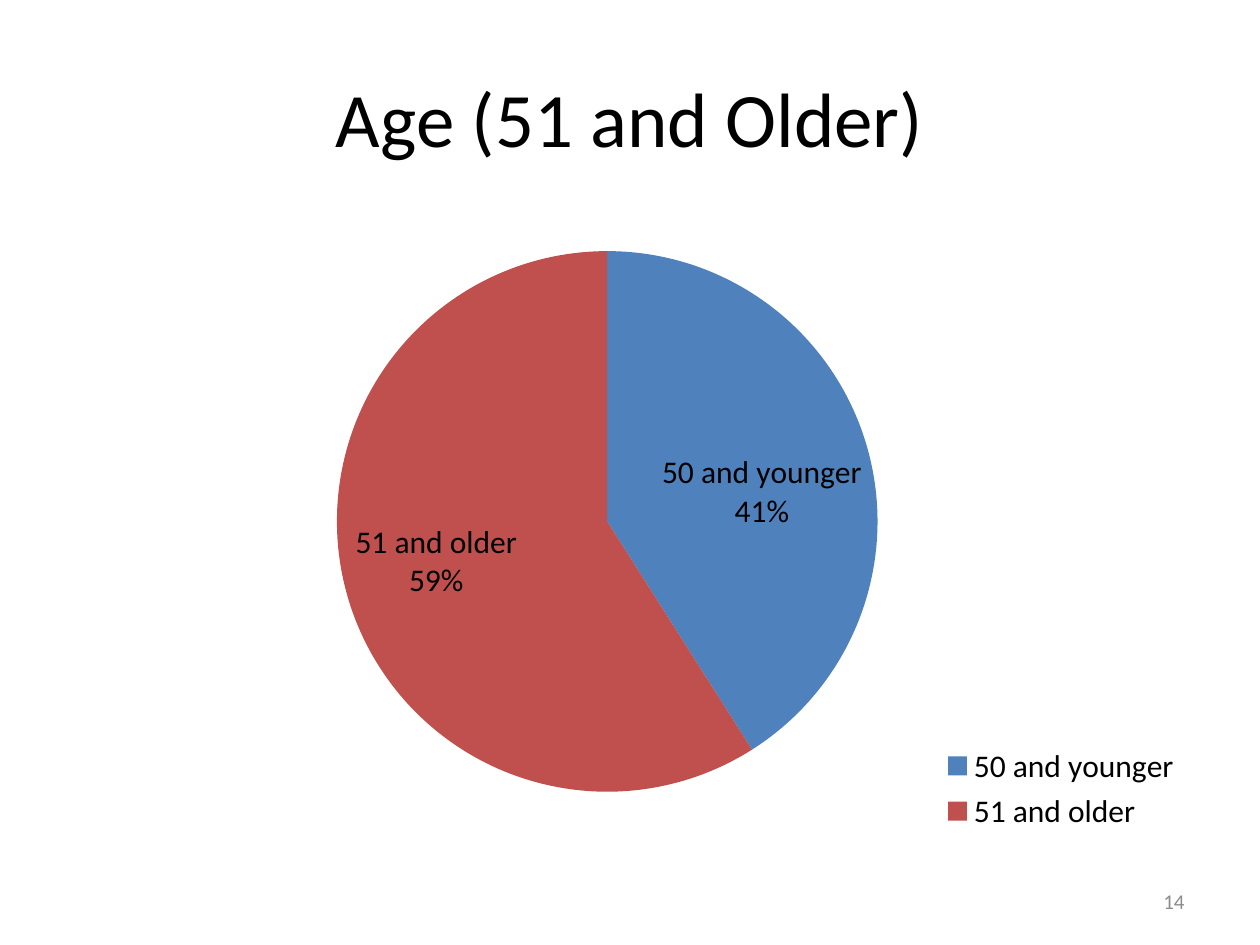
from dataclasses import dataclass

from lxml import etree
from pptx import Presentation
from pptx import util as u
from pptx.chart.data import CategoryChartData
from pptx.dml.color import RGBColor
from pptx.enum import chart as ch, text
from pptx.oxml import parse_xml
from pptx.oxml.ns import nsdecls

TITLE = "Age (51 and Older)"
PAGE = "14"
AGES = {"50 and younger": 41, "51 and older": 59}


@dataclass(frozen=True)
class Theme:
    font: str = "Calibri"
    ink: str = "000000"
    muted: str = "8C8C8C"
    slices: tuple = ("4F81BD", "C0504D")
    title: int = 44
    chart: int = 18
    page: int = 12


T = Theme()
TITLE_BOX = (0.5, 0.3, 9, 1.25)
CHART_BOX = (0.5, 1.58, 9, 5.17)
PAGE_BOX = (7.17, 6.95, 2.33, 0.4)
# Fractions of the chart area: left, top, width, height
PLOT_AREA = (0.07, 0.08, 0.82, 0.83)
LEGEND_AREA = (0.77, 0.83, 0.22, 0.15)


def set_font(font, size, color=T.ink):
    font.name = T.font
    font.size = u.Pt(size)
    font.color.rgb = RGBColor.from_string(color)


def add_text(s, box, content, size, color, align):
    tf = s.shapes.add_textbox(*map(u.Inches, box)).text_frame
    tf.word_wrap = True
    tf.vertical_anchor = text.MSO_ANCHOR.MIDDLE
    p = tf.paragraphs[0]
    p.text = content
    p.alignment = align
    set_font(p.font, size, color)


def manual_layout(area, inner=False):
    target = '<c:layoutTarget val="inner"/>' if inner else ""
    modes = "".join(f'<c:{k}Mode val="edge"/>' for k in "xy")
    sizes = "".join(f'<c:{k} val="{v}"/>' for k, v in zip("xywh", area))
    return parse_xml(f'<c:layout {nsdecls("c")}><c:manualLayout>'
                     f'{target}{modes}{sizes}</c:manualLayout></c:layout>')


def set_layout(parent, layout, before):
    """Put the layout just ahead of the named child, replacing any other."""
    for old in parent.xpath("./c:layout"):
        parent.remove(old)
    parent.xpath(f"./c:{before}")[0].addprevious(layout)


def add_age_pie(s):
    data = CategoryChartData()
    data.categories = list(AGES)
    data.add_series("Series 1", list(AGES.values()))
    chart = s.shapes.add_chart(ch.XL_CHART_TYPE.PIE,
                               *map(u.Inches, CHART_BOX), data).chart
    chart.has_title = False
    set_font(chart.font, T.chart)

    chart.has_legend = True
    legend = chart.legend
    legend.position = ch.XL_LEGEND_POSITION.RIGHT
    legend.include_in_layout = False
    set_font(legend.font, T.chart)

    plot = chart.plots[0]
    plot.vary_by_categories = True
    for i, color in enumerate(T.slices):
        fill = plot.series[0].points[i].format.fill
        fill.solid()
        fill.fore_color.rgb = RGBColor.from_string(color)

    plot.has_data_labels = True
    labels = plot.data_labels
    labels.show_category_name = labels.show_percentage = True
    labels.show_value = False
    labels.position = ch.XL_LABEL_POSITION.BEST_FIT
    set_font(labels.font, T.chart)
    separator = etree.Element(labels._element.tag.replace("dLbls", "separator"))
    separator.text = "\n"
    labels._element.xpath("./c:showBubbleSize")[0].addnext(separator)

    plot_area = chart._chartSpace.xpath(".//c:plotArea")[0]
    set_layout(plot_area, manual_layout(PLOT_AREA, inner=True), "pieChart")
    set_layout(legend._element, manual_layout(LEGEND_AREA), "overlay")


def main():
    prs = Presentation()
    prs.slide_width, prs.slide_height = u.Inches(10), u.Inches(7.5)
    s = prs.slides.add_slide(prs.slide_layouts[6])
    add_text(s, TITLE_BOX, TITLE, T.title, T.ink, text.PP_ALIGN.CENTER)
    add_text(s, PAGE_BOX, PAGE, T.page, T.muted, text.PP_ALIGN.RIGHT)
    add_age_pie(s)
    prs.save("out.pptx")


if __name__ == "__main__":
    main()
